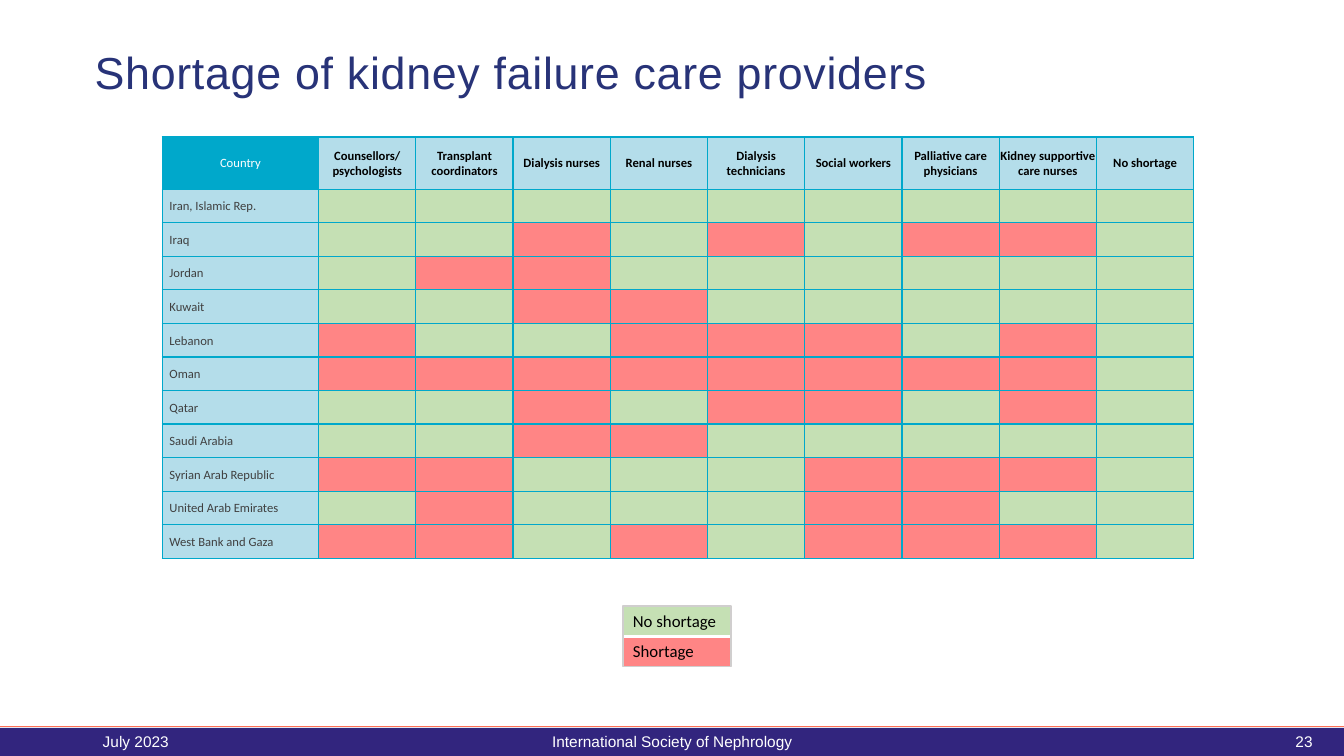
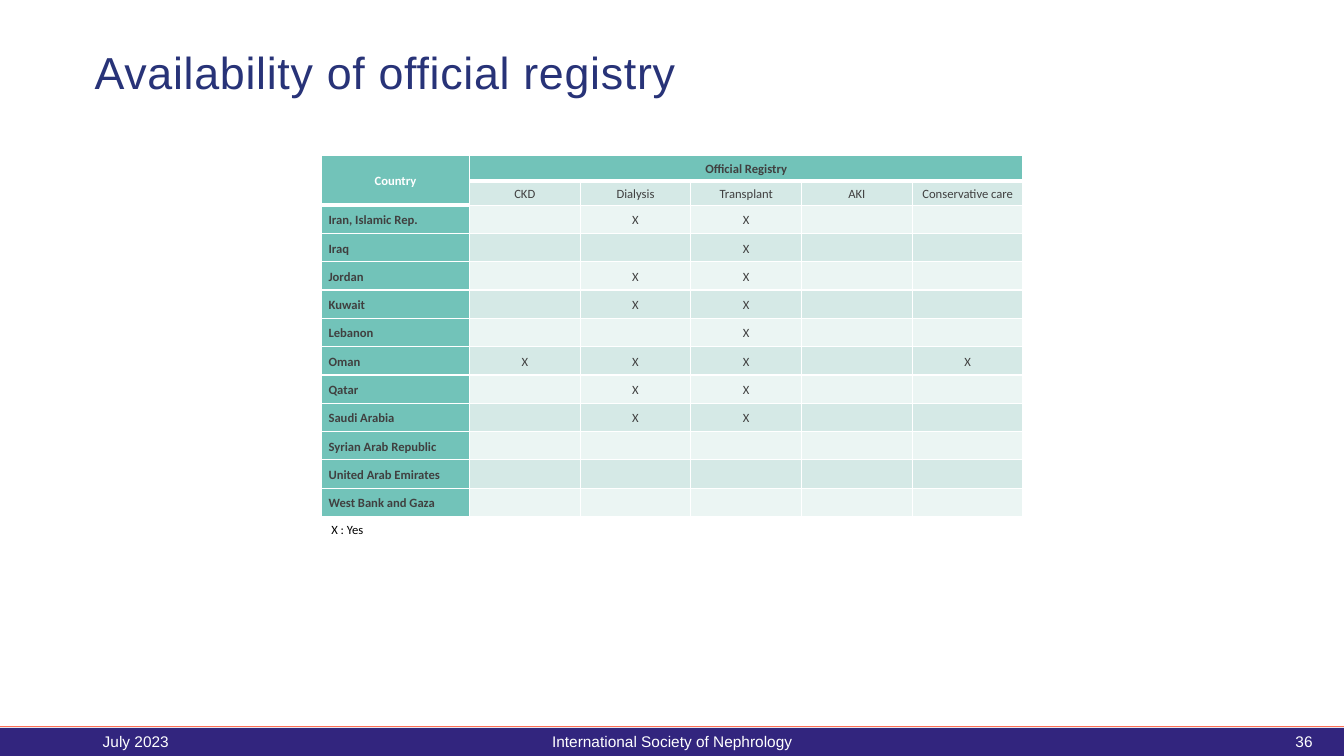
"""Build two slides on kidney care: provider shortages and official registries."""
from dataclasses import dataclass

from lxml.etree import SubElement
from pptx import Presentation
from pptx.dml.color import RGBColor as Rgb
from pptx.enum.shapes import MSO_CONNECTOR as Connector, MSO_SHAPE as Shape
from pptx.enum.text import MSO_ANCHOR as Anchor, MSO_AUTO_SIZE as AutoSize, PP_ALIGN as Align
from pptx.oxml.ns import qn
from pptx.util import Cm, Pt


@dataclass(frozen=True)
class Theme:
    title: str = "283378"
    band: str = "32257E"
    rule: str = "FE7055"
    white: str = "FFFFFF"
    black: str = "000000"
    grey: str = "404040"
    frame: str = "D0CECE"
    blue: str = "00A8CB"
    pale_blue: str = "B4DDEA"
    green: str = "C5E0B4"
    red: str = "FF8585"
    teal: str = "72C3B9"
    mid_teal: str = "D5E9E6"
    pale_teal: str = "EBF5F3"
    heading_font: str = "Arial"
    table_font: str = "Calibri"
    title_size: int = 32
    legend_size: int = 12
    footer_size: int = 11
    cell_size: int = 9


theme = Theme()


def write(frame, text, size, color, font=theme.table_font, bold=False, align=Align.LEFT, spacing=1.0):
    para = frame.paragraphs[0]
    para.alignment = align
    para.line_spacing = spacing
    span = para.add_run()
    span.text = text
    span.font.size = Pt(size)
    span.font.name = font
    span.font.bold = bold
    span.font.color.rgb = Rgb.from_string(color)
    return span


def paint(cell, fill, border, bottom=1, margins=(0.18, 0, 0.18, 0)):
    properties = cell._tc.get_or_add_tcPr()
    for side, width in (("L", 1), ("R", 1), ("T", 1), ("B", bottom)):
        line = SubElement(properties, qn(f"a:ln{side}"), w=str(Pt(width)))
        SubElement(SubElement(line, qn("a:solidFill")), qn("a:srgbClr"), val=border)
    cell.fill.solid()
    cell.fill.fore_color.rgb = Rgb.from_string(fill)
    cell.vertical_anchor = Anchor.MIDDLE
    cell.margin_left, cell.margin_top, cell.margin_right, cell.margin_bottom = map(Cm, margins)
    SubElement(cell.text_frame.paragraphs[0]._p, qn("a:endParaRPr"), sz=str(theme.cell_size * 100))


providers = ["Counsellors/ psychologists", "Transplant coordinators", "Dialysis nurses", "Renal nurses",
             "Dialysis technicians", "Social workers", "Palliative care physicians",
             "Kidney supportive care nurses", "No shortage"]
registries = ["CKD", "Dialysis", "Transplant", "AKI", "Conservative care"]
countries = [
    ("Iran, Islamic Rep.", ".........", ".XX.."),
    ("Iraq", "..X.X.XX.", "..X.."),
    ("Jordan", ".XX......", ".XX.."),
    ("Kuwait", "..XX.....", ".XX.."),
    ("Lebanon", "X..XXX.X.", "..X.."),
    ("Oman", "XXXXXXXX.", "XXX.X"),
    ("Qatar", "..X.XX.X.", ".XX.."),
    ("Saudi Arabia", "..XX.....", ".XX.."),
    ("Syrian Arab Republic", "XX...XXX.", "....."),
    ("United Arab Emirates", ".X...XX..", "....."),
    ("West Bank and Gaza", "XX.X.XXX.", "....."),
]

deck = Presentation()
deck.slide_width, deck.slide_height = Cm(33.87), Cm(19.05)

pages = []
for title, number in (("Shortage of kidney failure care providers", "23"),
                      ("Availability of official registry", "36")):
    page = deck.slides.add_slide(deck.slide_layouts[5])
    pages.append(page)
    heading = page.shapes.title
    heading.left, heading.top, heading.width, heading.height = Cm(2.13), Cm(0.99), Cm(23.52), Cm(1.8)
    heading.text_frame.vertical_anchor = Anchor.MIDDLE
    span = write(heading.text_frame, title, theme.title_size, theme.title, theme.heading_font, spacing=0.9)
    span._r.get_or_add_rPr().set("spc", "50")

    band = page.shapes.add_shape(Shape.RECTANGLE, 0, Cm(18.34), deck.slide_width, Cm(0.71))
    band.shadow.inherit = False
    band.fill.solid()
    band.fill.fore_color.rgb = Rgb.from_string(theme.band)
    band.line.fill.background()
    rule = page.shapes.add_connector(Connector.STRAIGHT, 0, Cm(18.31), deck.slide_width, Cm(18.31))
    rule.line.color.rgb = Rgb.from_string(theme.rule)
    rule.line.width = Pt(0.75)
    SubElement(rule._element.spPr, qn("a:effectLst"))

    for text, left, width, align in (("July 2023", 2.34, 7.62, Align.LEFT),
                                     ("International Society of Nephrology", 11.23, 11.43, Align.CENTER),
                                     (number, 23.93, 9.4, Align.RIGHT)):
        box = page.shapes.add_textbox(Cm(left), Cm(18.16), Cm(width), Cm(1.02))
        box.text_frame.word_wrap = True
        box.text_frame.vertical_anchor = Anchor.MIDDLE
        write(box.text_frame, text, theme.footer_size, theme.white, theme.heading_font, align=align)

shortage_page, registry_page = pages
body_rows = len(countries)
tables = []
for page, left, top, widths, heights in (
    (shortage_page, 4.09, 3.45, [3.94] + [2.45] * len(providers), [1.32] + [9.3 / body_rows] * body_rows),
    (shortage_page, 15.7, 15.27, [2.72], [0.76] * 2),
    (registry_page, 8.1, 3.91, [3.73] + [2.79] * len(registries), [0.65, 0.61] + [7.85 / body_rows] * body_rows),
):
    table = page.shapes.add_table(len(heights), len(widths), Cm(left), Cm(top),
                                  Cm(sum(widths)), Cm(sum(heights))).table
    table.first_row = table.horz_banding = False
    for column, width in zip(table.columns, widths):
        column.width = Cm(width)
    for row, height in zip(table.rows, heights):
        row.height = Cm(height)
    tables.append(table)
shortages, legend, registry = tables

corner = shortages.cell(0, 0)
write(corner.text_frame, "Country", theme.cell_size, theme.white, align=Align.CENTER, spacing=1.07)
paint(corner, theme.blue, theme.blue)
for column, provider in enumerate(providers, 1):
    cell = shortages.cell(0, column)
    write(cell.text_frame, provider, theme.cell_size, theme.black, bold=True, align=Align.CENTER)
    paint(cell, theme.pale_blue, theme.blue, margins=(0.03, 0.03, 0.03, 0))
for row, (country, marks, _) in enumerate(countries, 1):
    cell = shortages.cell(row, 0)
    write(cell.text_frame, country, theme.cell_size, theme.grey, spacing=1.07)
    paint(cell, theme.pale_blue, theme.blue)
    for column, mark in enumerate(marks, 1):
        paint(shortages.cell(row, column), theme.red if mark == "X" else theme.green, theme.blue)

for row, (label, fill, bottom) in enumerate((("No shortage", theme.green, 3), ("Shortage", theme.red, 1))):
    cell = legend.cell(row, 0)
    write(cell.text_frame, label, theme.legend_size, theme.black)
    paint(cell, fill, theme.white, bottom, margins=(0.25, 0.13, 0.25, 0.13))
outline = shortage_page.shapes.add_shape(Shape.RECTANGLE, Cm(15.7), Cm(15.27), Cm(2.72), Cm(1.52))
outline.shadow.inherit = False
outline.fill.background()
outline.line.color.rgb = Rgb.from_string(theme.frame)
outline.line.width = Pt(1)

registry.cell(0, 0).merge(registry.cell(1, 0))
registry.cell(0, 1).merge(registry.cell(0, len(registries)))
for column, text, color in ((0, "Country", theme.white), (1, "Official Registry", theme.grey)):
    write(registry.cell(0, column).text_frame, text, theme.cell_size, color,
          bold=True, align=Align.CENTER, spacing=1.15)
for column in range(len(registries) + 1):
    paint(registry.cell(0, column), theme.teal, theme.white, bottom=3)
paint(registry.cell(1, 0), theme.teal, theme.white, bottom=3)
for column, name in enumerate(registries, 1):
    cell = registry.cell(1, column)
    write(cell.text_frame, name, theme.cell_size, theme.grey, align=Align.CENTER, spacing=1.15)
    paint(cell, theme.mid_teal, theme.white)
for row, (country, _, marks) in enumerate(countries, 2):
    cell = registry.cell(row, 0)
    write(cell.text_frame, country, theme.cell_size, theme.grey, bold=True, spacing=1.15)
    paint(cell, theme.teal, theme.white)
    for column, mark in enumerate(marks, 1):
        cell = registry.cell(row, column)
        if mark == "X":
            write(cell.text_frame, mark, theme.cell_size, theme.grey, align=Align.CENTER, spacing=1.15)
        paint(cell, theme.mid_teal if row % 2 else theme.pale_teal, theme.white)

key = registry_page.shapes.add_textbox(Cm(8.1), Cm(13.03), Cm(1.9), Cm(0.64))
key.text_frame.word_wrap = True
key.text_frame.auto_size = AutoSize.SHAPE_TO_FIT_TEXT
write(key.text_frame, "X : Yes", theme.cell_size, theme.black)

deck.save("out.pptx")
